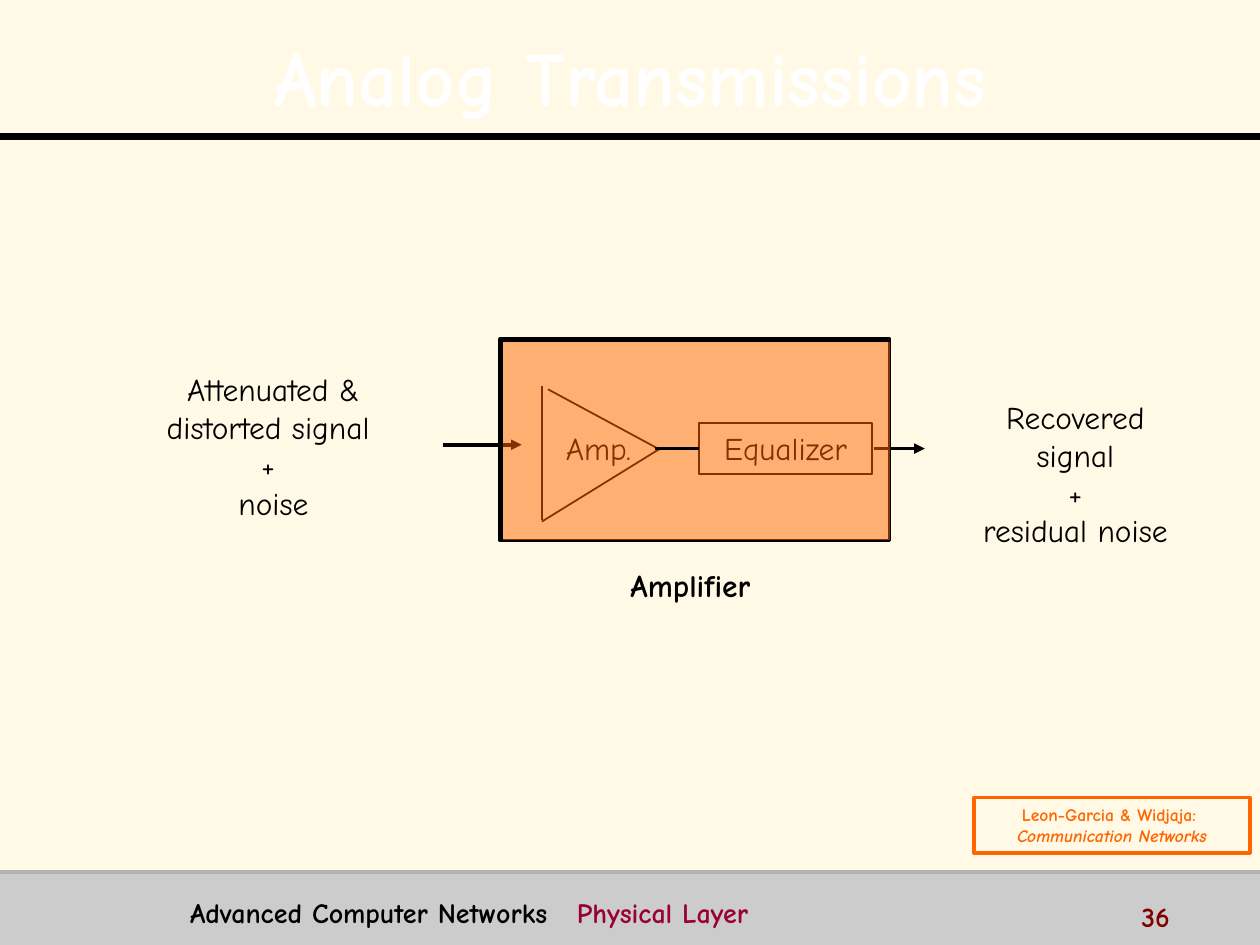
from dataclasses import dataclass

from lxml import etree
from pptx import Presentation
from pptx import util as u
from pptx.dml.color import RGBColor
from pptx.enum import shapes, text
from pptx.oxml.ns import qn

CELL = 0.1  # inches; the page is a grid of 100 columns by 75 rows
COLUMNS, ROWS = 100, 75


@dataclass(frozen=True)
class Theme:
    font: str = "Comic Neue"
    page: str = "FFF9E6"
    ink: str = "000000"
    title: str = "FFFFFF"
    band: str = "CCCCCC"
    rule: str = "B2B2B2"
    topic: str = "990033"
    number: str = "800000"
    accent: str = "FF6600"
    title_size: int = 44
    body_size: int = 18
    footer_size: int = 16
    source_size: int = 10


THEME = Theme()


@dataclass(frozen=True)
class Area:
    """A box in grid cells; at() places a part relative to its corner."""
    left: float
    top: float
    width: float
    height: float

    def at(self, column, row, width=0, height=0):
        return Area(self.left + column, self.top + row, width, height)

    def lengths(self):
        return [u.Inches(round(cells * CELL, 2))
                for cells in (self.left, self.top, self.width, self.height)]


def color(value):
    return RGBColor.from_string(value)


def style(span, size, ink=THEME.ink, bold=False, italic=False):
    span.font.name = THEME.font
    span.font.size = u.Pt(size)
    span.font.color.rgb = color(ink)
    span.font.bold = bold
    span.font.italic = italic


def write(box, lines, size, align=text.PP_ALIGN.CENTER,
          anchor=text.MSO_ANCHOR.TOP, **look):
    frame = box.text_frame
    frame.word_wrap = True
    frame.vertical_anchor = anchor
    frame.text = "\n".join(lines)
    for para in frame.paragraphs:
        para.alignment = align
        for span in para.runs:
            style(span, size, **look)
    return frame


def label(page, area, lines, size=THEME.body_size, **look):
    return write(page.shapes.add_textbox(*area.lengths()), lines, size, **look)


def rectangle(page, area, fill=None, line=None, weight=1.0, alpha=None):
    box = page.shapes.add_shape(shapes.MSO_SHAPE.RECTANGLE, *area.lengths())
    box.shadow.inherit = False
    if fill:
        box.fill.solid()
        box.fill.fore_color.rgb = color(fill)
    else:
        box.fill.background()
    if alpha:
        tone = box.fill._xPr.find(".//" + qn("a:srgbClr"))
        etree.SubElement(tone, qn("a:alpha"), val=str(alpha * 1000))
    if line:
        box.line.color.rgb = color(line)
        box.line.width = u.Pt(weight)
    else:
        box.line.fill.background()
    return box


def line(page, start, end, weight=1, ink=THEME.ink, arrow=False):
    ends = start.lengths()[:2] + end.lengths()[:2]
    stroke = page.shapes.add_connector(shapes.MSO_CONNECTOR.STRAIGHT, *ends)
    stroke.line.color.rgb = color(ink)
    stroke.line.width = u.Pt(weight)
    if arrow:
        etree.SubElement(stroke.line._get_or_add_ln(), qn("a:tailEnd"),
                         type="triangle")
    etree.SubElement(stroke._element.spPr, qn("a:effectLst"))


def header(page, area):
    line(page, area.at(0, area.height), area.at(area.width, area.height), 4)
    title = page.shapes.title
    title.left, title.top, title.width, title.height = area.at(
        2, 1.3, 96.1, 8.7).lengths()
    frame = write(title, ["Analog Transmissions"], THEME.title_size,
                  anchor=text.MSO_ANCHOR.MIDDLE, ink=THEME.title, bold=True)
    para = frame.paragraphs[0]
    para.line_spacing = 1.1
    # Dark text shadow, placed right after the text colour
    effects = etree.Element(qn("a:effectLst"))
    shadow = etree.SubElement(effects, qn("a:outerShdw"), dist="35921",
                              dir="2700000", algn="ctr")
    etree.SubElement(shadow, qn("a:srgbClr"), val=THEME.ink)
    para.runs[0]._r.rPr.find(qn("a:solidFill")).addnext(effects)


def footer(page, area):
    rectangle(page, area, fill=THEME.band)
    line(page, area, area.at(area.width, 0), 2, THEME.rule)
    # Course and topic, parted by a tab stop
    left = text.PP_ALIGN.LEFT
    frame = label(page, area.at(14.1, 1.4, 72.8, 3.1),
                  ["Advanced Computer Networks"], THEME.footer_size,
                  align=left, bold=True)
    para = frame.paragraphs[0]
    tabs = etree.SubElement(para._p.get_or_add_pPr(), qn("a:tabLst"))
    etree.SubElement(tabs, qn("a:tab"), pos=str(u.Inches(3.07)), algn="l")
    topic = para.add_run()
    topic.text = "\tPhysical Layer"
    style(topic, THEME.footer_size, THEME.topic, bold=True)
    # Page number
    label(page, area.at(89.6, 1.7, 10, 2.5), ["36"], THEME.footer_size,
          align=left, ink=THEME.number, bold=True)


def amplifier_diagram(page, area):
    # Output arrow and equalizer
    line(page, area.at(65.9, 8.7), area.at(69.9, 8.7), 2, arrow=True)
    equalizer = rectangle(page, area.at(52, 6.7, 13.7, 4), line=THEME.ink)
    write(equalizer, ["Equalizer"], THEME.body_size)
    # Input arrow and amplifier triangle
    line(page, area.at(31.7, 8.4), area.at(37.9, 8.4), 2, arrow=True)
    for start, end in (((39.5, 3.7), (39.5, 14.4)),
                       ((40, 4), (48.9, 8.8)),
                       ((48.9, 8.7), (39.5, 14.5))):
        line(page, area.at(*start), area.at(*end))
    label(page, area.at(39.5, 6.7, 9, 4), ["Amp."])
    # Frame under a translucent panel
    rectangle(page, area.at(36.2, 0, 30.9, 16), line=THEME.ink, weight=2)
    rectangle(page, area.at(36.4, 0.2, 30.8, 15.8), fill=THEME.accent,
              line=THEME.ink, weight=0.75, alpha=50)
    line(page, area.at(48.5, 8.7), area.at(52, 8.7), 2)
    # Captions
    label(page, area.at(43.6, 17.5, 15.4, 4), ["Amplifier"], bold=True)
    label(page, area.at(0, 2, 36.4, 13.1),
          ["Attenuated &", "distorted signal ", "+ ", "noise"])
    label(page, area.at(72.2, 4.2, 19.3, 13),
          ["Recovered signal", "+", "residual noise"])


def source_credit(page, area):
    box = rectangle(page, area, line=THEME.accent, weight=2)
    frame = write(box, ["Leon-Garcia & Widjaja: ", "Communication Networks"],
                  THEME.source_size, anchor=text.MSO_ANCHOR.MIDDLE,
                  ink=THEME.accent, bold=True)
    frame.paragraphs[1].runs[0].font.italic = True


def main():
    deck = Presentation()
    deck.slide_width = u.Inches(COLUMNS * CELL)
    deck.slide_height = u.Inches(ROWS * CELL)
    page = deck.slides.add_slide(deck.slide_layouts[5])
    page.background.fill.solid()
    page.background.fill.fore_color.rgb = color(THEME.page)
    footer(page, Area(0, 69.2, COLUMNS, 5.8))
    header(page, Area(0, 0, COLUMNS, 10.8))
    amplifier_diagram(page, Area(3.5, 26.9, 91.5, 21.5))
    source_credit(page, Area(77.3, 63.3, 21.9, 4.4))
    deck.save("out.pptx")


if __name__ == "__main__":
    main()
